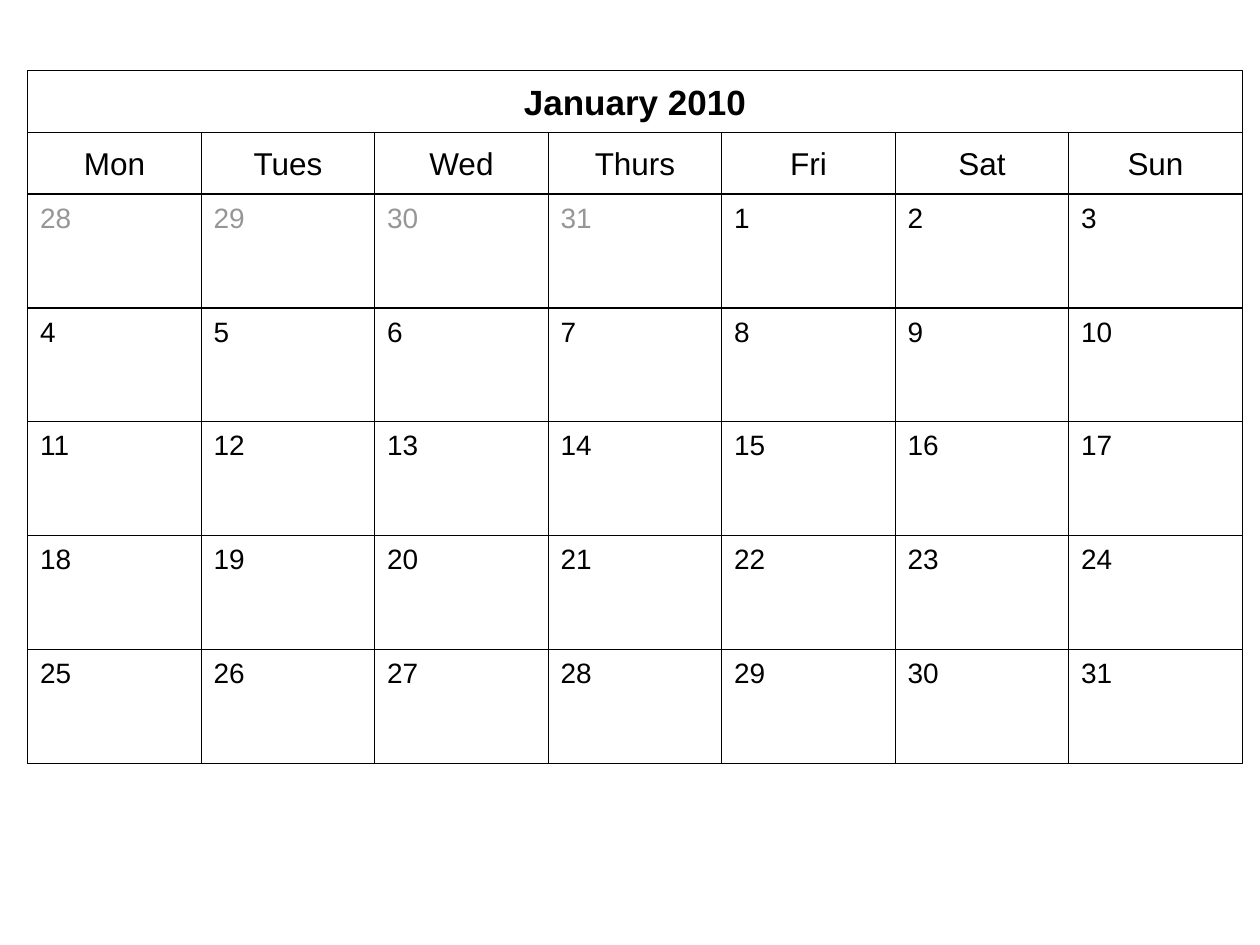
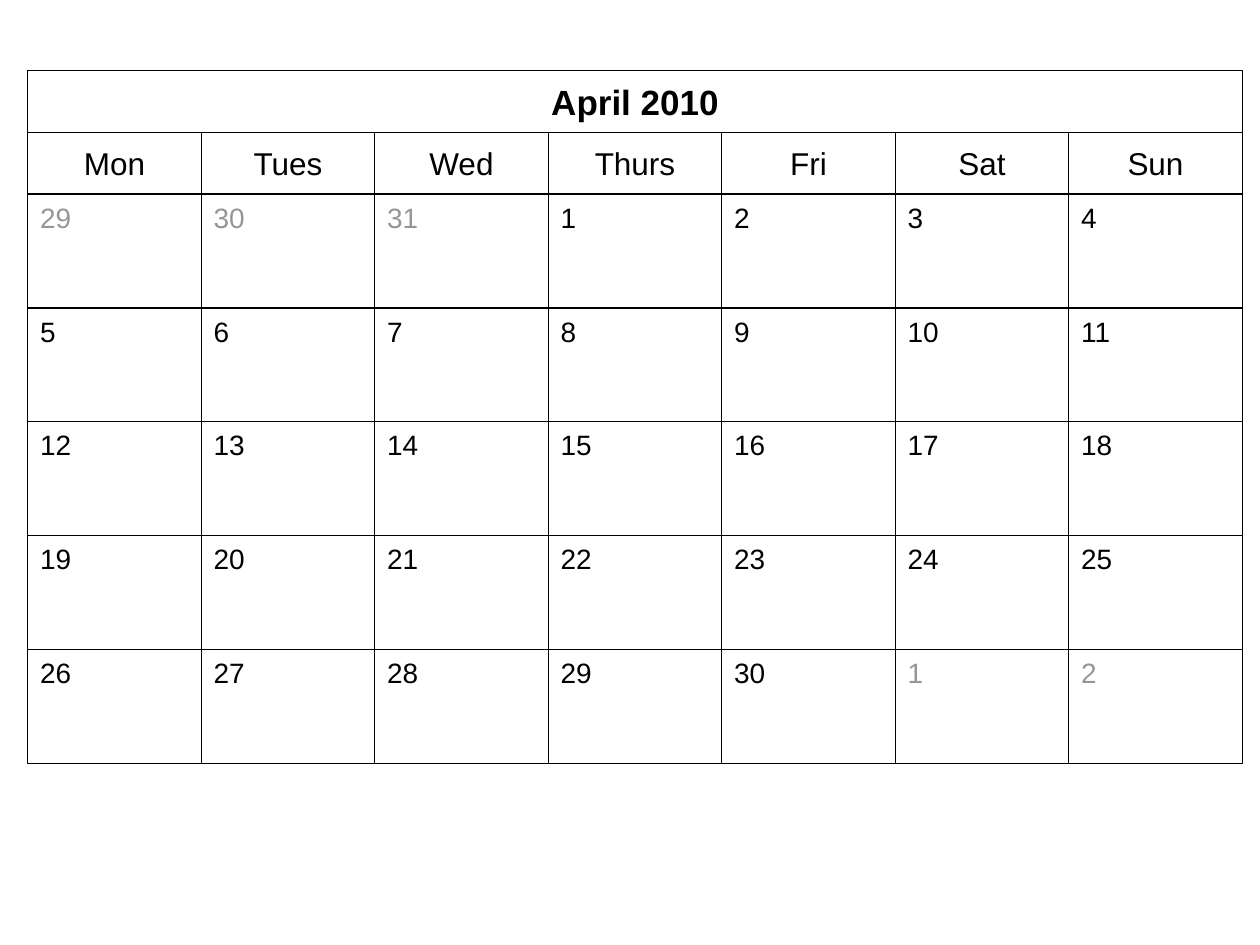
from itertools import chain, islice

from pptx import Presentation
from pptx.dml.color import RGBColor
from pptx.enum import shapes, text
from pptx.util import Inches, Pt

BLACK = RGBColor(0x00, 0x00, 0x00)
WHITE = RGBColor(0xFF, 0xFF, 0xFF)
GREY = RGBColor(0x96, 0x96, 0x96)
FONT = "Arial"

WEEKDAYS = ["Mon", "Tues", "Wed", "Thurs", "Fri", "Sat", "Sun"]
WEEKS = 5

LEFT, TOP, WIDTH = 0.22, 0.56, 9.64
HEADING_HEIGHT = 0.49
DAYS_TOP, DAYS_BOTTOM = 1.54, 6.06
DAY_WIDTH = WIDTH / len(WEEKDAYS)
DAY_HEIGHT = (DAYS_BOTTOM - DAYS_TOP) / WEEKS

# Heading, days shown from the month before, its last day, days in the month
MONTHS = [
    ("January 2010", 4, 31, 31),
    ("April 2010", 3, 31, 30),
]


def write(shape, words, size=16, color=BLACK, bold=False, heading=False):
    """Fill a shape with one line; a heading is centred, a date sits top left."""
    frame = shape.text_frame
    frame.auto_size = text.MSO_AUTO_SIZE.NONE
    frame.word_wrap = True
    frame.margin_left = frame.margin_right = Inches(0.1)
    frame.margin_top = frame.margin_bottom = Inches(0.02 if heading else 0.05)
    frame.vertical_anchor = text.MSO_ANCHOR.MIDDLE if heading else text.MSO_ANCHOR.TOP
    line = frame.paragraphs[0]
    line.alignment = text.PP_ALIGN.CENTER if heading else text.PP_ALIGN.LEFT
    run = line.add_run()
    run.text = words
    run.font.name = FONT
    run.font.size = Pt(size)
    run.font.bold = bold
    run.font.color.rgb = color


class CalendarDeck:
    def __init__(self):
        self.deck = Presentation()
        self.deck.slide_width = Inches(10)
        self.deck.slide_height = Inches(7.5)
        self.slide = None

    def outline(self, shape, filled):
        if filled:
            shape.fill.solid()
            shape.fill.fore_color.rgb = WHITE
        else:
            shape.fill.background()
        shape.line.color.rgb = BLACK
        shape.line.width = Pt(0.75)

    def title(self, words):
        title = self.slide.shapes.title
        title.left, title.top = Inches(LEFT), Inches(TOP)
        title.width, title.height = Inches(WIDTH), Inches(HEADING_HEIGHT)
        self.outline(title, filled=True)
        write(title, words, size=20, bold=True, heading=True)

    def box(self, column, top, height, words, heading=False, **style):
        box = self.slide.shapes.add_shape(
            shapes.MSO_SHAPE.RECTANGLE,
            Inches(LEFT + column * DAY_WIDTH), Inches(top),
            Inches(DAY_WIDTH), Inches(height))
        box.shadow.inherit = False
        self.outline(box, filled=heading)
        write(box, words, heading=heading, **style)

    def month(self, name, lead, previous_last, length):
        title_only = self.deck.slide_layouts[5]
        self.slide = self.deck.slides.add_slide(title_only)
        self.title(name)
        for column, weekday in enumerate(WEEKDAYS):
            self.box(column, TOP + HEADING_HEIGHT, HEADING_HEIGHT, weekday,
                     heading=True, size=18)

        dates = chain(range(previous_last - lead + 1, previous_last + 1),
                      range(1, length + 1), range(1, len(WEEKDAYS)))
        for place, date in enumerate(islice(dates, WEEKS * len(WEEKDAYS))):
            week, column = divmod(place, len(WEEKDAYS))
            in_month = lead <= place < lead + length
            self.box(column, DAYS_TOP + week * DAY_HEIGHT, DAY_HEIGHT, str(date),
                     color=BLACK if in_month else GREY)


def main():
    calendar = CalendarDeck()
    for month in MONTHS:
        calendar.month(*month)
    calendar.deck.save("out.pptx")


if __name__ == "__main__":
    main()
